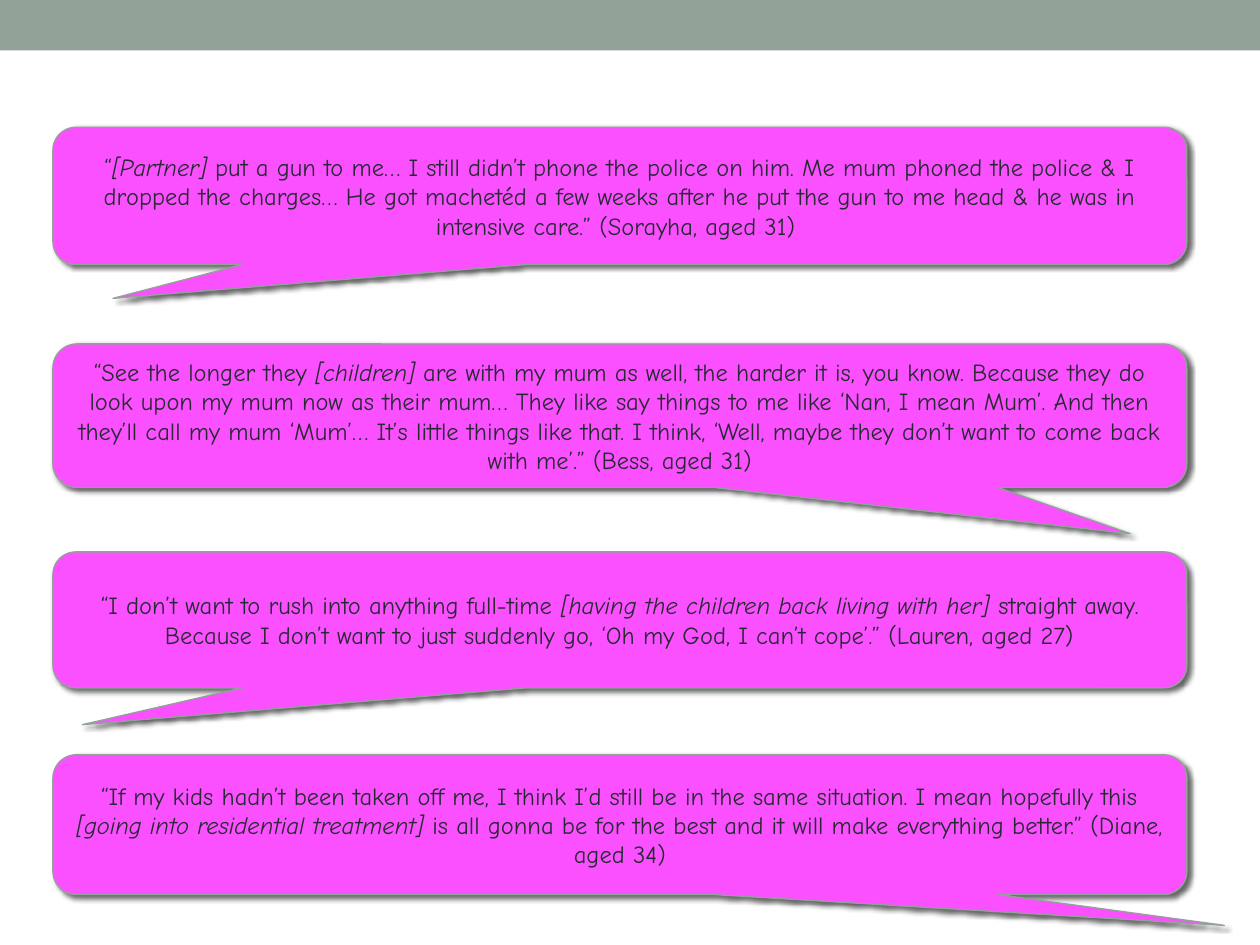
"""Build a slide of four interview quotes in speech bubbles."""
from dataclasses import dataclass

from lxml import etree
from pptx import Presentation
from pptx.dml.color import RGBColor
from pptx.enum.shapes import MSO_SHAPE
from pptx.enum.text import MSO_ANCHOR, PP_ALIGN
from pptx.oxml.ns import qn
from pptx.shapes.autoshape import Shape
from pptx.slide import Slide
from pptx.util import Inches, Pt

RECTANGLE = MSO_SHAPE.RECTANGLE
CALLOUT = MSO_SHAPE.ROUNDED_RECTANGULAR_CALLOUT
MIDDLE = MSO_ANCHOR.MIDDLE
CENTER = PP_ALIGN.CENTER

SAGE = RGBColor(0x93, 0xA2, 0x99)
PINK = RGBColor(0xFA, 0x50, 0xFF)
INK = RGBColor(0x29, 0x29, 0x34)
BLACK = RGBColor(0, 0, 0)

BUBBLE_LEFT = 0.42
BUBBLE_WIDTH = 9
CORNER = 0.167
QUOTE_FONT = {"name": "Comic Neue", "size": Pt(14)}
SHADOW = {"blurRad": Pt(3), "dist": Pt(2), "dir": 45 * 60000, "algn": "tl", "rotWithShape": 0}
SHADOW_ALPHA = 60000


@dataclass(frozen=True)
class Quote:
    top: float
    height: float
    tail_x: float
    tail_y: float
    before: str
    aside: str
    after: str


QUOTES = [
    Quote(
        1.01, 1.09, -0.447, 0.746,
        "“",
        "[Partner]",
        " put a gun to me… I still didn’t phone the police on him. Me mum phoned the police "
        "& I dropped the charges… He got machetéd a few weeks after he put the gun to me head "
        "& he was in intensive care.” (Sorayha, aged 31) ",
    ),
    Quote(
        2.73, 1.14, 0.45, 0.821,
        "“See the longer they ",
        "[children]",
        " are with my mum as well, the harder it is, you know. Because they do look upon my mum "
        "now as their mum… They like say things to me like ‘Nan, I mean Mum’. And then they’ll "
        "call my mum ‘Mum’… It’s little things like that. I think, ‘Well, maybe they don’t want "
        "to come back with me’.” (Bess, aged 31)",
    ),
    Quote(
        4.38, 1.08, -0.474, 0.77,
        "“I don’t want to rush into anything full-time ",
        "[having the children back living with her] ",
        "straight away. Because I don’t want to just suddenly go, ‘Oh my God, I can’t cope’.” "
        "(Lauren, aged 27)",
    ),
    Quote(
        5.99, 1.11, 0.533, 0.72,
        "“If my kids hadn’t been taken off me, I think I’d still be in the same situation. "
        "I mean hopefully this ",
        "[going into residential treatment] ",
        "is all gonna be for the best and it will make everything better.” (Diane, aged 34)",
    ),
]


def add_shadow(shape: Shape) -> None:
    """Give the shape a soft shadow to the lower right."""
    effects = shape._element.spPr.find(qn("a:effectLst"))
    shadow = etree.SubElement(effects, qn("a:outerShdw"))
    for name, value in SHADOW.items():
        shadow.set(name, str(value))
    color = etree.SubElement(shadow, qn("a:srgbClr"), val=str(BLACK))
    etree.SubElement(color, qn("a:alpha"), val=str(SHADOW_ALPHA))


def add_banner(slide: Slide) -> None:
    """Draw the plain band along the top edge."""
    banner = slide.shapes.add_shape(RECTANGLE, 0, 0, Inches(10), Inches(0.4))
    banner.fill.solid()
    banner.fill.fore_color.rgb = SAGE
    banner.line.fill.background()
    banner.shadow.inherit = False


def add_quote(slide: Slide, quote: Quote) -> None:
    """Draw one speech bubble with its quote."""
    bubble = slide.shapes.add_shape(
        CALLOUT, Inches(BUBBLE_LEFT), Inches(quote.top), Inches(BUBBLE_WIDTH), Inches(quote.height)
    )
    for index, value in enumerate((quote.tail_x, quote.tail_y, CORNER)):
        bubble.adjustments[index] = value
    bubble.fill.solid()
    bubble.fill.fore_color.rgb = PINK
    bubble.line.color.rgb = SAGE
    bubble.line.width = Pt(0.75)
    bubble.shadow.inherit = False
    add_shadow(bubble)

    frame = bubble.text_frame
    frame.word_wrap = True
    frame.vertical_anchor = MIDDLE
    paragraph = frame.paragraphs[0]
    paragraph.alignment = CENTER
    for text, italic in ((quote.before, False), (quote.aside, True), (quote.after, False)):
        run = paragraph.add_run()
        run.text = text
        for name, value in QUOTE_FONT.items():
            setattr(run.font, name, value)
        run.font.italic = italic
        run.font.color.rgb = INK


def main() -> None:
    """Build and save the presentation."""
    presentation = Presentation()
    presentation.slide_width = Inches(10)
    presentation.slide_height = Inches(7.5)
    slide = presentation.slides.add_slide(presentation.slide_layouts[6])
    add_banner(slide)
    for quote in QUOTES:
        add_quote(slide, quote)
    presentation.save("out.pptx")


if __name__ == "__main__":
    main()
